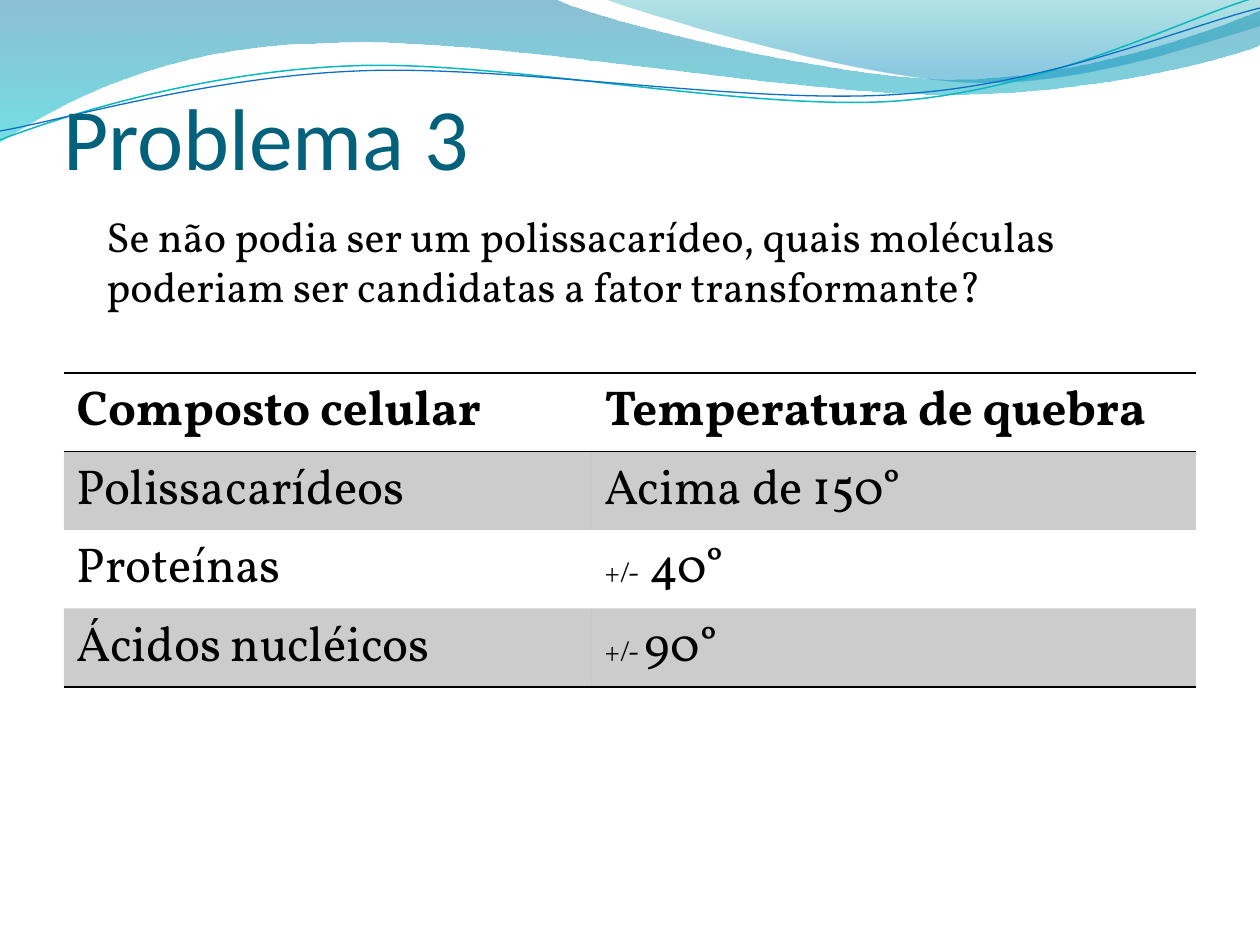
from math import cos, radians, sin

from lxml.etree import SubElement
from pptx import Presentation
from pptx.dml.color import RGBColor as RGB
from pptx.enum.text import MSO_ANCHOR as Anchor, MSO_AUTO_SIZE as AutoSize, PP_ALIGN as Align
from pptx.oxml import parse_xml
from pptx.oxml.ns import nsdecls, qn
from pptx.util import Pt

PX = 914400 / 126
COLORS = {
    "title": "04617B", "ink": "000000",
    "band_top": "0074A1", "band_bottom": "00C6CF",
    "sweep_top": "00A1A9", "sweep_bottom": "008BBF",
    "teal": "0AB8BF", "blue": "0F6FC6",
}
NO_STYLE = "{2D5ABB26-0587-4C30-8999-92F81FD0307C}"
WAVE_TILT = 357.3

BAND = [
    (0, 0), (554, -1),
    (600, 21, 837, 79, 955, 79), (1075, 79, 1207, 33, 1260, 11),
    (1261, 45),
    (1239, 55, 1096, 96, 940, 94), (784, 94, 481, 35, 324, 43),
    (163, 45, 58, 105, -1, 142), (0, 0),
]
SWEEP = [
    (604, -1),
    (641, 14, 859, 78, 969, 82), (1079, 87, 1211, 40, 1260, 26),
    (1260, 0), (604, -1),
]
TEAL_WAVE = [
    (0, 140),
    (60, 117, 199, 72, 349, 66), (498, 59, 747, 112, 898, 101),
    (1050, 89, 1182, 19, 1257, -3),
]
BLUE_WAVE = [
    (0, 131),
    (59, 121, 207, 77, 357, 71), (508, 64, 752, 106, 903, 94),
    (1053, 84, 1186, 26, 1260, 8),
]
COMPOUNDS = [
    [[("Composto celular", 28)], [("Temperatura de quebra", 28)]],
    [[("Polissacarídeos", 28)], [("Acima de 150°", 28)]],
    [[("Proteínas", 28)], [("+/-", 16), (" 40°", 28)]],
    [[("Ácidos nucléicos", 28)], [("+/- ", 16), ("90°", 28)]],
]


def px(length):
    return round(length * PX)


def color(name):
    return RGB.from_string(COLORS[name])


def apply(target, values):
    for name, value in values.items():
        setattr(target, name, value)


def place(shape, box):
    apply(shape, dict(zip(("left", "top", "width", "height"), map(px, box))))


def add_run(paragraph, text, size, typeface, ink, bold=False):
    run = paragraph.add_run()
    run.text = text
    apply(run.font, {"size": Pt(size), "name": typeface, "bold": bold})
    run.font.color.rgb = color(ink)


def set_alpha(element, percents):
    for tint, percent in zip(element.iter(qn("a:srgbClr")), percents):
        SubElement(tint, qn("a:alpha"), val=str(percent * 1000))


def turn(point, pivot, degrees):
    angle = radians(degrees)
    x, y = point[0] - pivot[0], point[1] - pivot[1]
    return (pivot[0] + x * cos(angle) - y * sin(angle),
            pivot[1] + x * sin(angle) + y * cos(angle))


def add_outline(shapes, origin, path, closed, pivot=(0, 0), tilt=0):
    points = [part[i:i + 2] for part in path for i in range(0, len(part), 2)]
    turned = [turn(point, pivot, -tilt) for point in points]
    corners = [(px(origin[0] + x), px(origin[1] + y)) for x, y in turned]
    builder = shapes.build_freeform(*corners[0], scale=1.0)
    builder.add_line_segments(corners[1:], close=closed)
    outline = builder.convert_to_shape()
    segments = iter(list(outline.element.iter(qn("a:lnTo"))))
    for part in path[1:]:
        segment = next(segments)
        if len(part) == 6:
            curve = parse_xml(f'<a:cubicBezTo {nsdecls("a")}/>')
            segment.addprevious(curve)
            for piece in (segment, next(segments), next(segments)):
                curve.append(piece[0])
                piece.getparent().remove(piece)
    outline.rotation = tilt
    outline.shadow.inherit = False
    return outline


def add_waves(slide, box):
    origin = box[:2]
    for path, stops in (
        (BAND, (("band_top", 0, 45), ("band_bottom", 1, 55))),
        (SWEEP, (("sweep_top", 0, 30), ("sweep_bottom", 0.8, 45))),
    ):
        ribbon = add_outline(slide.shapes, origin, path, True)
        ribbon.line.fill.background()
        ribbon.fill.gradient()
        ribbon.fill.gradient_angle = 270
        for stop, (name, position, _) in zip(ribbon.fill.gradient_stops, stops):
            stop.color.rgb = color(name)
            stop.position = position
        set_alpha(ribbon.element, [alpha for _, _, alpha in stops])
    waves = slide.shapes.add_group_shape().shapes
    for path, pivot, name, weight in (
        (TEAL_WAVE, (629, 72), "teal", 0.85),
        (BLUE_WAVE, (629, 74), "blue", 0.75),
    ):
        wave = add_outline(waves, origin, path, False, pivot, WAVE_TILT)
        wave.fill.background()
        wave.line.color.rgb = color(name)
        wave.line.width = Pt(weight)


def add_title(slide, box):
    title = slide.shapes.title
    slide.shapes.element.append(title.element)
    place(title, box)
    apply(title.text_frame, {
        "auto_size": AutoSize.NONE, "vertical_anchor": Anchor.BOTTOM, "word_wrap": True,
        "margin_left": 0, "margin_top": px(6), "margin_right": 0, "margin_bottom": 0,
    })
    heading = title.text_frame.paragraphs[0]
    heading.alignment = Align.LEFT
    add_run(heading, "Problema 3", 50, "Calibri", "title")


def add_question(slide, box):
    question = slide.shapes.add_textbox(*map(px, box)).text_frame
    apply(question, {"word_wrap": True, "auto_size": AutoSize.SHAPE_TO_FIT_TEXT})
    add_run(
        question.paragraphs[0],
        "Se não podia ser um polissacarídeo, quais moléculas "
        "poderiam ser candidatas a fator transformante?",
        24, "Vollkorn", "ink",
    )


def add_borders(cell, sides):
    properties = cell._tc.get_or_add_tcPr()
    for index, side in enumerate(sides):
        properties.insert(index, parse_xml(
            f'<a:ln{side} {nsdecls("a")} w="{Pt(1)}"><a:solidFill>'
            f'<a:srgbClr val="{COLORS["ink"]}"/></a:solidFill></a:ln{side}>'
        ))


def add_compounds(slide, box, widths):
    frame = slide.shapes.add_table(len(COMPOUNDS), len(widths), *map(px, box))
    table = frame.table
    apply(table, {"first_row": False, "horz_banding": False})
    next(frame.element.iter(qn("a:tableStyleId"))).text = NO_STYLE
    for column, width in zip(table.columns, widths):
        column.width = px(width)
    last = len(COMPOUNDS) - 1
    for row, entries in enumerate(COMPOUNDS):
        table.rows[row].height = px(box[3] / len(COMPOUNDS))
        for column, entry in enumerate(entries):
            cell = table.cell(row, column)
            if row % 2:
                cell.fill.solid()
                cell.fill.fore_color.rgb = color("ink")
                set_alpha(cell._tc, [20])
            else:
                cell.fill.background()
            add_borders(cell, {0: "TB", last: "B"}.get(row, ""))
            for text, size in entry:
                add_run(cell.text_frame.paragraphs[0], text, size, "Vollkorn", "ink", row == 0)


def main():
    deck = Presentation()
    apply(deck, {"slide_width": px(1260), "slide_height": px(945)})
    slide = deck.slides.add_slide(deck.slide_layouts[5])
    add_waves(slide, (0, 0, 1260, 142))
    add_title(slide, (63, 30, 1144, 158))
    add_question(slide, (94, 204, 1101, 115))
    add_compounds(slide, (64, 373, 1132, 314), (528, 604))
    deck.save("out.pptx")


if __name__ == "__main__":
    main()
